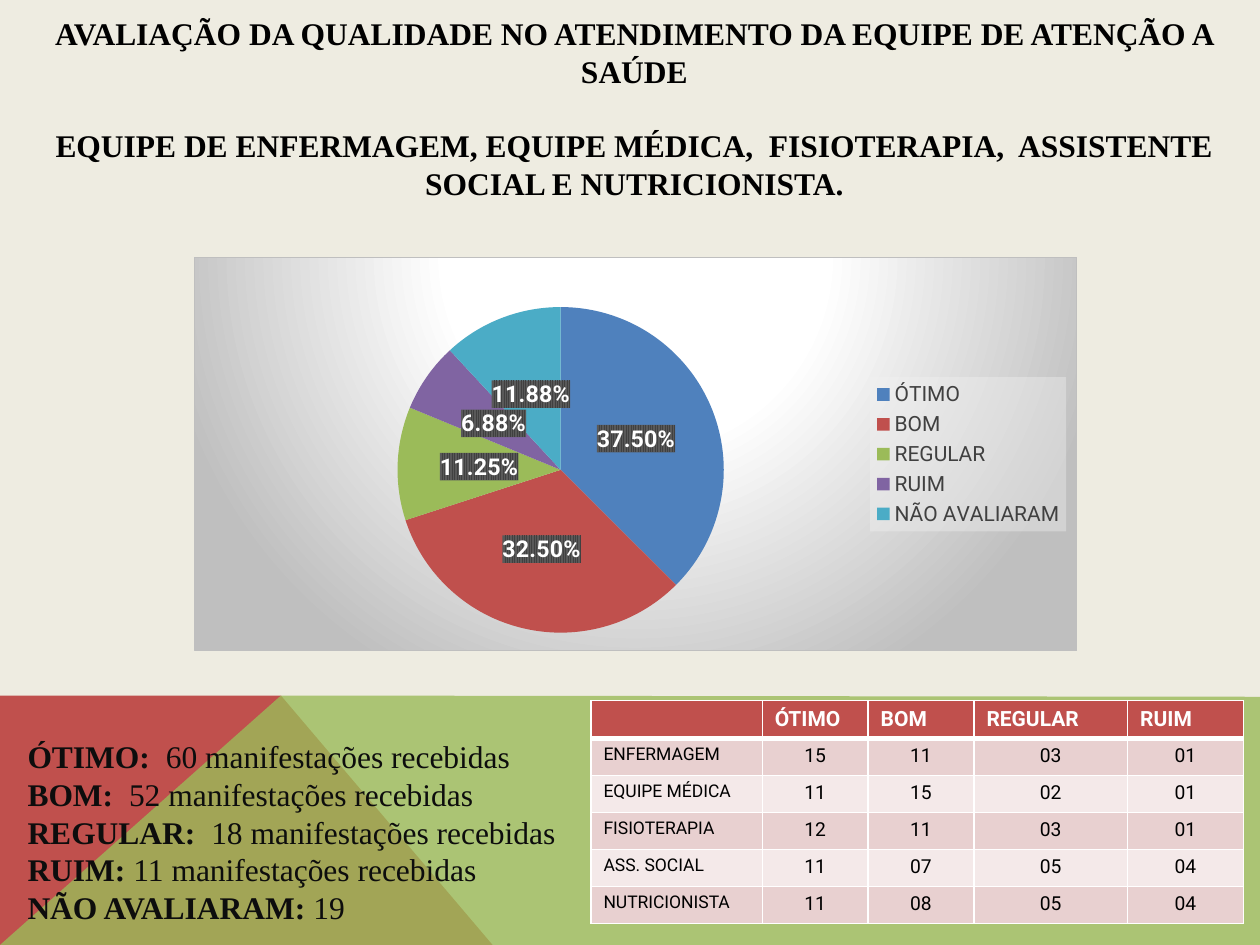
from pptx import Presentation
from pptx.chart.data import CategoryChartData
from pptx.dml.color import RGBColor
from pptx.enum.chart import XL_CHART_TYPE as ChartType
from pptx.enum.chart import XL_LABEL_POSITION as LabelPosition
from pptx.enum.chart import XL_LEGEND_POSITION as LegendPosition
from pptx.enum.text import MSO_ANCHOR as Anchor
from pptx.enum.text import MSO_AUTO_SIZE as AutoSize
from pptx.enum.text import PP_ALIGN as Align
from pptx.oxml import parse_xml
from pptx.oxml.ns import nsdecls
from pptx.util import Inches, Pt

WIDTH, HEIGHT = Inches(10), Inches(7.5)
COLUMNS, ROWS = 100, 75
SERIF, SANS = "Times New Roman", "Roboto"
COLORS = {
    "paper": "EEECE1", "black": "000000", "ink": "0D0D0D", "white": "FFFFFF",
    "blue": "4F81BD", "red": "C0504D", "green": "9BBB59", "purple": "8064A2",
    "teal": "4BACC6", "gray": "BFBFBF", "legend": "404040", "haze": "F2F2F2",
    "label": "404040", "stripe": "595959", "odd": "E8D0D0", "even": "F4E9E9",
}
TITLE = [
    "AVALIAÇÃO DA QUALIDADE NO ATENDIMENTO DA EQUIPE DE ATENÇÃO A SAÚDE",
    "EQUIPE DE ENFERMAGEM, EQUIPE MÉDICA,  FISIOTERAPIA,  ASSISTENTE SOCIAL E NUTRICIONISTA.",
]
TOTALS = [
    ("ÓTIMO:  ", "60 manifestações recebidas"),
    ("BOM:  ", "52 manifestações recebidas"),
    ("REGULAR:  ", "18 manifestações recebidas"),
    ("RUIM: ", "11 manifestações recebidas"),
    ("NÃO AVALIARAM: ", "19"),
]
SHARES = [
    ("ÓTIMO", 37.5, "blue"), ("BOM", 32.5, "red"), ("REGULAR", 11.25, "green"),
    ("RUIM", 6.88, "purple"), ("NÃO AVALIARAM", 11.88, "teal"),
]
RATINGS = [
    ["", "ÓTIMO", "BOM", "REGULAR", "RUIM"],
    ["ENFERMAGEM", "15", "11", "03", "01"],
    ["EQUIPE MÉDICA", "11", "15", "02", "01"],
    ["FISIOTERAPIA", "12", "11", "03", "01"],
    ["ASS. SOCIAL", "11", "07", "05", "04"],
    ["NUTRICIONISTA", "11", "08", "05", "04"],
]


def col(count):
    """Return the width of a number of grid columns."""
    return int(WIDTH * count / COLUMNS)


def row(count):
    """Return the height of a number of grid rows."""
    return int(HEIGHT * count / ROWS)


def area(left, top, width, height):
    """Turn grid units into left, top, width and height."""
    return col(left), row(top), col(width), row(height)


def rgb(name):
    """Look up a colour by name."""
    return RGBColor.from_string(COLORS[name])


def style(font, face, size, color, bold=False):
    """Format a font."""
    font.name, font.size, font.bold = face, Pt(size), bold
    font.color.rgb = rgb(color)


def solid(name, alpha=100):
    """Return solid fill markup."""
    return (f'<a:solidFill><a:srgbClr val="{COLORS[name]}">'
            f'<a:alpha val="{alpha * 1000}"/></a:srgbClr></a:solidFill>')


def add_band(slide, points, color, alpha=100):
    """Add a footer polygon through grid points."""
    corners = [(col(x), row(y)) for x, y in points]
    builder = slide.shapes.build_freeform(*corners[0])
    builder.add_line_segments(corners[1:], close=True)
    band = builder.convert_to_shape()
    band.shadow.inherit = False
    band.line.fill.background()
    band.fill.solid()
    band.fill.fore_color.rgb = rgb(color)
    fill_color = band.fill._xPr.solidFill[0]
    fill_color.append(parse_xml(f'<a:alpha {nsdecls("a")} val="{alpha * 1000}"/>'))


def set_title(slide):
    """Place and format the title."""
    title = slide.shapes.title
    title.left, title.top, title.width, title.height = area(3.1, 3.1, 94.5, 10.9)
    frame = title.text_frame
    frame.text = "\n".join(TITLE)
    frame.word_wrap, frame.auto_size = True, AutoSize.NONE
    frame.vertical_anchor = Anchor.MIDDLE
    for para in frame.paragraphs:
        para.alignment = Align.CENTER
        style(para.runs[0].font, SERIF, 18, "black", True)
    frame.paragraphs[1].space_before = Pt(21)


def add_totals(slide):
    """Add the list of received ratings."""
    frame = slide.shapes.add_textbox(*area(1.2, 58, 44.5, 17)).text_frame
    frame.word_wrap = True
    for index, parts in enumerate(TOTALS):
        para = frame.add_paragraph() if index else frame.paragraphs[0]
        for text, bold in zip(parts, (True, False)):
            span = para.add_run()
            span.text = text
            style(span.font, SERIF, 18, "ink", bold)


def set_chart_box(element, content):
    """Insert shape properties before the text properties of a chart part."""
    element.find("{*}txPr").addprevious(
        parse_xml(f'<c:spPr {nsdecls("c", "a")}>{content}</c:spPr>'))


def set_plot_layout(chart, left, top, width, height):
    """Fix the inner plot area as shares of the chart."""
    plot_area = chart._chartSpace.chart.plotArea
    for layout in plot_area.findall("{*}layout"):
        plot_area.remove(layout)
    shares = "".join(f'<c:{tag} val="{value}"/>' for tag, value in
                     zip("xywh", (left, top, width, height)))
    plot_area.insert(0, parse_xml(
        f'<c:layout {nsdecls("c")}><c:manualLayout><c:layoutTarget val="inner"/>'
        f'<c:xMode val="edge"/><c:yMode val="edge"/>{shares}</c:manualLayout></c:layout>'))


def add_pie(slide):
    """Add the pie chart with its legend and labels."""
    data = CategoryChartData()
    data.categories = [name for name, _, _ in SHARES]
    data.add_series("Series 1", [value for _, value, _ in SHARES])
    chart = slide.shapes.add_chart(ChartType.PIE, *area(15.4, 20.4, 70.1, 31.3), data).chart
    chart.has_title = False
    style(chart.font, SANS, 10, "black")
    stops = "".join(f'<a:gs pos="{place}000"><a:srgbClr val="{COLORS[name]}"/></a:gs>'
                    for place, name in ((0, "white"), (39, "white"), (100, "gray")))
    set_chart_box(chart._chartSpace, (
        f'<a:gradFill><a:gsLst>{stops}</a:gsLst><a:path path="circle">'
        '<a:fillToRect l="50000" t="-80000" r="50000" b="180000"/></a:path></a:gradFill>'
        f'<a:ln w="{Pt(0.75)}">{solid("gray")}</a:ln>'))
    set_plot_layout(chart, 0.23, 0.12, 0.37, 0.84)
    chart.has_legend = True
    legend = chart.legend
    legend.position, legend.include_in_layout = LegendPosition.RIGHT, False
    style(legend.font, SANS, 12, "legend")
    set_chart_box(legend._element, solid("haze", 39))
    plot = chart.plots[0]
    plot.vary_by_categories = True
    for index, (_, _, color) in enumerate(SHARES):
        fill = plot.series[0].points[index].format.fill
        fill.solid()
        fill.fore_color.rgb = rgb(color)
    labels = plot.series[0].data_labels
    labels.show_percentage, labels.show_value = True, False
    labels.number_format, labels.number_format_is_linked = "0.00%", False
    labels.position = LabelPosition.CENTER
    style(labels.font, SANS, 13.3, "white", True)
    set_chart_box(labels._element, (
        f'<a:pattFill prst="narVert"><a:fgClr><a:srgbClr val="{COLORS["label"]}"/></a:fgClr>'
        f'<a:bgClr><a:srgbClr val="{COLORS["stripe"]}"/></a:bgClr></a:pattFill>'))


def set_borders(cell, top, bottom):
    """Draw white cell borders with the given top and bottom widths."""
    properties = cell._tc.get_or_add_tcPr()
    for side, width in (("L", 1), ("R", 1), ("T", top), ("B", bottom)):
        properties.append(parse_xml(
            f'<a:ln{side} {nsdecls("a")} w="{Pt(width)}">{solid("white")}</a:ln{side}>'))


def fill_cell(cell, text, line, column):
    """Write and format one cell by its place in the table."""
    header = line == 0
    set_borders(cell, 3 if line == 1 else 1, 3 if header else 1)
    cell.fill.solid()
    cell.fill.fore_color.rgb = rgb("red" if header else "odd" if line % 2 else "even")
    cell.text = text
    para = cell.text_frame.paragraphs[0]
    size = 12 if header else 11 if column else 10
    if column and not header:
        para.alignment = Align.CENTER
    style(para.font, SANS, size, "white" if header else "black", header)
    for span in para.runs:
        style(span.font, SANS, size, "white" if header else "black", header)


def add_ratings(slide):
    """Add the table of ratings for each team."""
    place = area(46.9, 55.6, 51.8, 17.7)
    table = slide.shapes.add_table(len(RATINGS), len(RATINGS[0]), *place).table
    for column, width in zip(table.columns, (13.6, 8.4, 8.4, 12.2, 9.2)):
        column.width = col(width)
    for line, texts in enumerate(RATINGS):
        table.rows[line].height = row(2.94 if line else 3)
        for column, text in enumerate(texts):
            fill_cell(table.cell(line, column), text, line, column)


def main():
    """Build the slide and save it."""
    deck = Presentation()
    deck.slide_width, deck.slide_height = WIDTH, HEIGHT
    slide = deck.slides.add_slide(deck.slide_layouts[5])
    slide.background.fill.solid()
    slide.background.fill.fore_color.rgb = rgb("paper")
    add_band(slide, [(0, 75), (0, 55.2), (22.3, 55.2), (39.1, 75)], "red")
    add_band(slide, [(0, 75), (22.3, 55.2), (100, 55.3), (100, 75)], "green", 80)
    set_title(slide)
    add_totals(slide)
    add_pie(slide)
    add_ratings(slide)
    deck.save("out.pptx")


if __name__ == "__main__":
    main()
